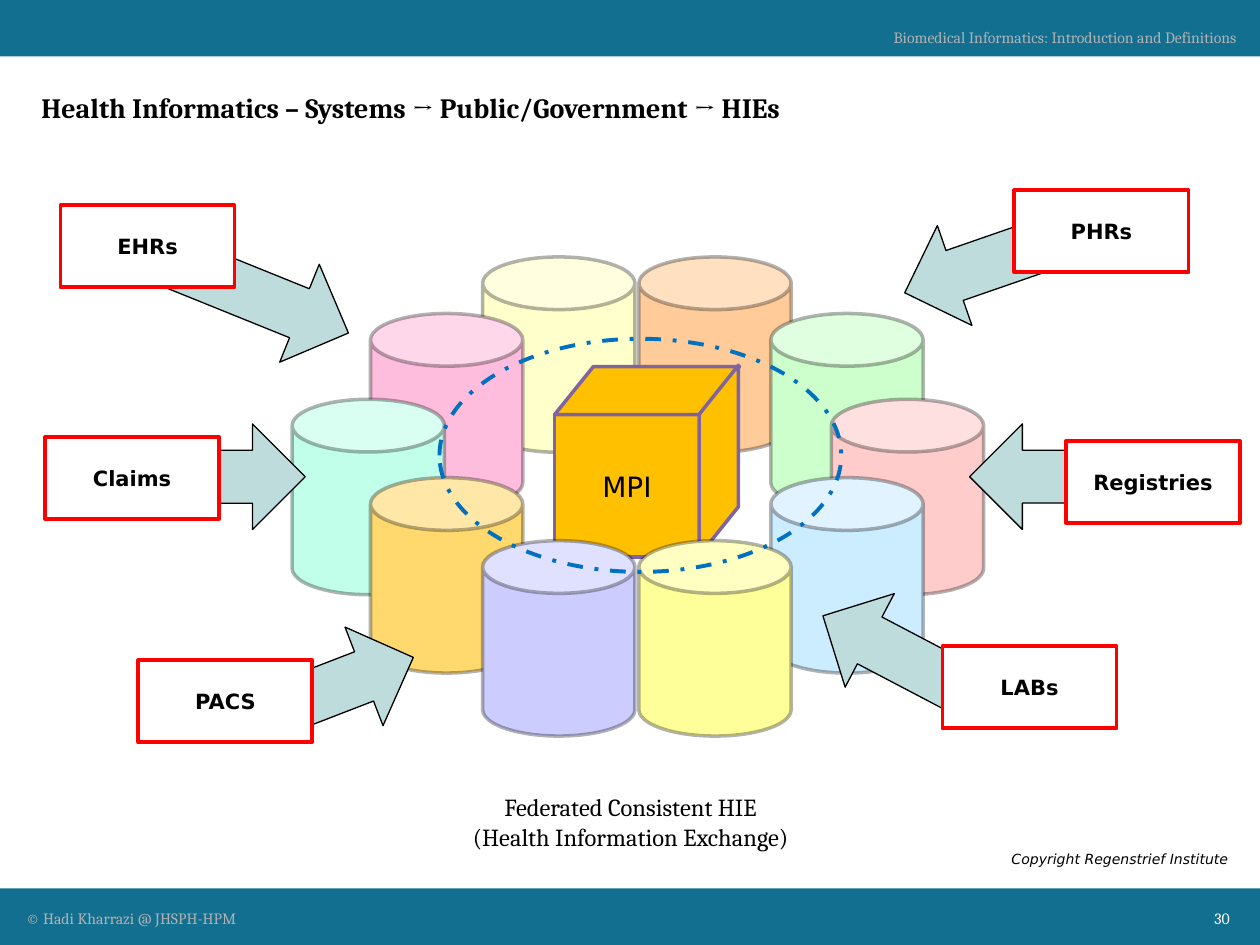
from lxml.etree import SubElement
from pptx import Presentation
from pptx.dml.color import RGBColor
from pptx.enum.dml import MSO_LINE
from pptx.enum.shapes import MSO_SHAPE
from pptx.enum.text import MSO_ANCHOR, PP_ALIGN
from pptx.oxml.ns import qn
from pptx.util import Cm, Pt

BLACK = RGBColor(0x00, 0x00, 0x00)
WHITE = RGBColor(0xFF, 0xFF, 0xFF)
GREY = RGBColor(0xB2, 0xB2, 0xB2)
TEAL = RGBColor(0x12, 0x6F, 0x90)
RED = RGBColor(0xFF, 0x00, 0x00)
BLUE = RGBColor(0x00, 0x70, 0xC0)
PURPLE = RGBColor(0x80, 0x64, 0xA2)
GOLD = RGBColor(0xFF, 0xC0, 0x00)
MIST = RGBColor(0xBE, 0xDC, 0xDC)
PEACH = RGBColor(0xFF, 0xCC, 0x99)
CREAM = RGBColor(0xFF, 0xFF, 0xCC)
GREEN = RGBColor(0xCC, 0xFF, 0xCC)
PINK = RGBColor(0xFF, 0xBD, 0xDE)
ROSE = RGBColor(0xFF, 0xCC, 0xCC)
MINT = RGBColor(0xC1, 0xFF, 0xEA)
SKY = RGBColor(0xCC, 0xEC, 0xFF)
AMBER = RGBColor(0xFF, 0xD9, 0x6D)
YELLOW = RGBColor(0xFF, 0xFF, 0x99)
LILAC = RGBColor(0xCC, 0xCC, 0xFF)

SERIF = "Cambria"
SANS = "DejaVu Sans"

# Colour, left and top, from back to front
BACK_DATABASES = [(PEACH, 12.88, 5.18), (CREAM, 9.73, 5.18)]
FRONT_DATABASES = [
    (GREEN, 15.54, 6.32), (PINK, 7.47, 6.32),
    (ROSE, 16.76, 8.05), (MINT, 5.89, 8.05),
    (SKY, 15.54, 9.63), (AMBER, 7.47, 9.63),
    (YELLOW, 12.88, 10.9), (LILAC, 9.73, 10.9),
]
# Left, top, length and rotation
ARROWS = [
    (4.17, 4.06, 3.86, 292), (3.4, 7.92, 3.38, 270), (5.69, 12.17, 3.38, 248.9),
    (17.02, 11.51, 3.38, 117.7), (20.17, 7.92, 3.38, 90), (18.77, 3.66, 3.38, 70.9),
]
SOURCES = [
    ("EHRs", 1.22, 4.14), ("Claims", 0.91, 8.81), ("PACS", 2.79, 13.31),
    ("LABs", 19, 13.03), ("Registries", 21.49, 8.89), ("PHRs", 20.45, 3.84),
]


class SlideBuilder:
    def __init__(self, page):
        self.page = page

    def add_spans(self, frame, lines, size, font, color=BLACK, align=PP_ALIGN.CENTER,
                  bold=False, italic=False):
        para = frame.paragraphs[0]
        para.alignment = align
        for index, line in enumerate(lines.split("\n")):
            if index:
                para.add_line_break()
            span = para.add_run()
            span.text = line
            span.font.name = font
            span.font.size = Pt(size)
            span.font.bold = bold
            span.font.italic = italic
            span.font.color.rgb = color

    def title(self, text, left, top, width, height):
        box = self.page.shapes.title
        box.left, box.top, box.width, box.height = map(Cm, (left, top, width, height))
        box.text_frame.vertical_anchor = MSO_ANCHOR.MIDDLE
        self.add_spans(box.text_frame, text, 16, SERIF, align=PP_ALIGN.LEFT, bold=True)

    def text(self, lines, left, top, width, height, size, font, wrap=True, **style):
        box = self.page.shapes.add_textbox(*map(Cm, (left, top, width, height)))
        box.text_frame.word_wrap = wrap
        self.add_spans(box.text_frame, lines, size, font, **style)

    def shape(self, kind, left, top, width, height, fill=None, line=None, weight=2,
              parent=None):
        shapes = (parent or self.page).shapes
        shape = shapes.add_shape(kind, *map(Cm, (left, top, width, height)))
        shape.shadow.inherit = False
        if fill is None:
            shape.fill.background()
        else:
            shape.fill.solid()
            shape.fill.fore_color.rgb = fill
        if line is None:
            shape.line.fill.background()
        else:
            shape.line.color.rgb = line
            shape.line.width = Pt(weight)
        return shape

    def database(self, color, left, top):
        can = self.shape(MSO_SHAPE.CAN, left, top, 3.07, 3.94, color, BLACK)
        can.adjustments[0] = 0.346
        outline = can._element.spPr.find(qn("a:ln")).find(".//" + qn("a:srgbClr"))
        SubElement(outline, qn("a:alpha")).set("val", "30000")

    def cube(self, text):
        group = self.page.shapes.add_group_shape()
        style = dict(fill=GOLD, line=PURPLE, parent=group)
        front = self.shape(MSO_SHAPE.RECTANGLE, 11.18, 8.36, 2.92, 2.87, **style)
        self.add_spans(front.text_frame, text, 16, SANS)
        lid = self.shape(MSO_SHAPE.PARALLELOGRAM, 11.18, 7.39, 3.73, 0.97, **style)
        lid.adjustments[0] = 0.808
        side = self.shape(MSO_SHAPE.PARALLELOGRAM, 12.57, 8.89, 3.84, 0.79, **style)
        side.adjustments[0] = 1.251
        side.rotation = 270
        side._element.spPr.find(qn("a:xfrm")).set("flipV", "1")

    def arrow(self, left, top, length, rotation):
        arrow = self.shape(MSO_SHAPE.DOWN_ARROW, left, top, 2.13, length, MIST, BLACK, 0.75)
        arrow.rotation = rotation

    def source(self, text, left, top):
        box = self.shape(MSO_SHAPE.RECTANGLE, left, top, 3.51, 1.65, WHITE, RED, 2.25)
        self.add_spans(box.text_frame, text, 12, SANS, bold=True)

    def ring(self, left, top, width, height):
        ring = self.shape(MSO_SHAPE.OVAL, left, top, width, height, line=BLUE, weight=2.25)
        ring.line.dash_style = MSO_LINE.DASH_DOT


def main():
    deck = Presentation()
    deck.slide_width, deck.slide_height = Cm(25.4), Cm(19.05)
    page = deck.slides.add_slide(deck.slide_layouts[5])
    builder = SlideBuilder(page)
    left, right = PP_ALIGN.LEFT, PP_ALIGN.RIGHT

    for top in (0, 17.91):
        builder.shape(MSO_SHAPE.RECTANGLE, 0, top, 25.4, 1.14, TEAL)
    builder.text("© Hadi Kharrazi @ JHSPH-HPM", 0.28, 18.19, 15.77, 0.64, 9, SERIF,
                 color=GREY, align=left)
    builder.text("Biomedical Informatics: Introduction and Definitions",
                 17.07, 0.43, 8.1, 0.64, 9, SERIF, wrap=False, color=GREY, align=right)
    builder.title("Health Informatics – Systems → Public/Government → HIEs",
                  0.58, 1.57, 24.41, 1.17)
    builder.text("Copyright Regenstrief Institute", 20.07, 17.02, 4.95, 0.61, 8, SANS,
                 wrap=False, align=right, italic=True)
    builder.text("Federated Consistent HIE\n(Health Information Exchange)",
                 4.88, 15.85, 15.67, 1.45, 14, SERIF)

    for database in BACK_DATABASES:
        builder.database(*database)
    builder.cube("MPI")
    for database in FRONT_DATABASES:
        builder.database(*database)
    for arrow in ARROWS:
        builder.arrow(*arrow)
    for source in SOURCES:
        builder.source(*source)
    builder.ring(8.86, 6.83, 8.1, 4.7)
    builder.text("30", 23.39, 18.19, 1.65, 0.64, 9, SERIF, color=WHITE, align=right)

    deck.save("out.pptx")


if __name__ == "__main__":
    main()
